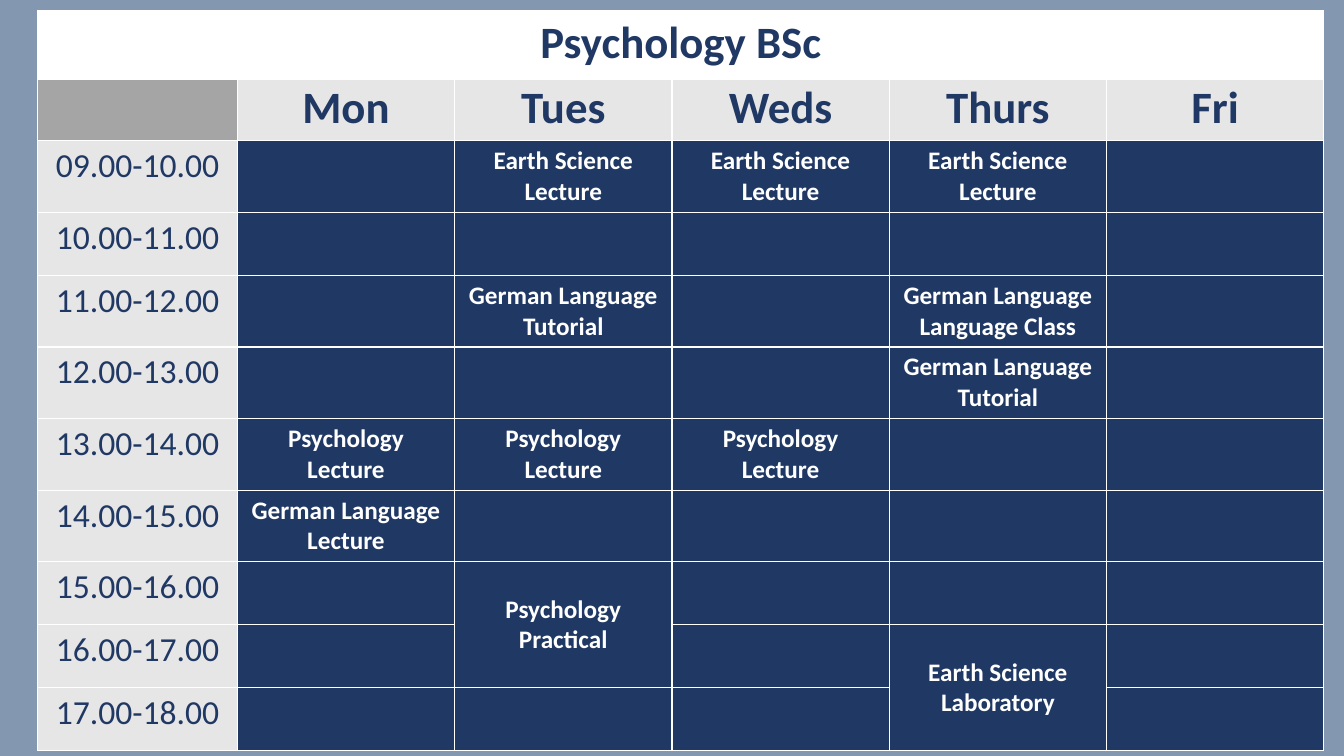
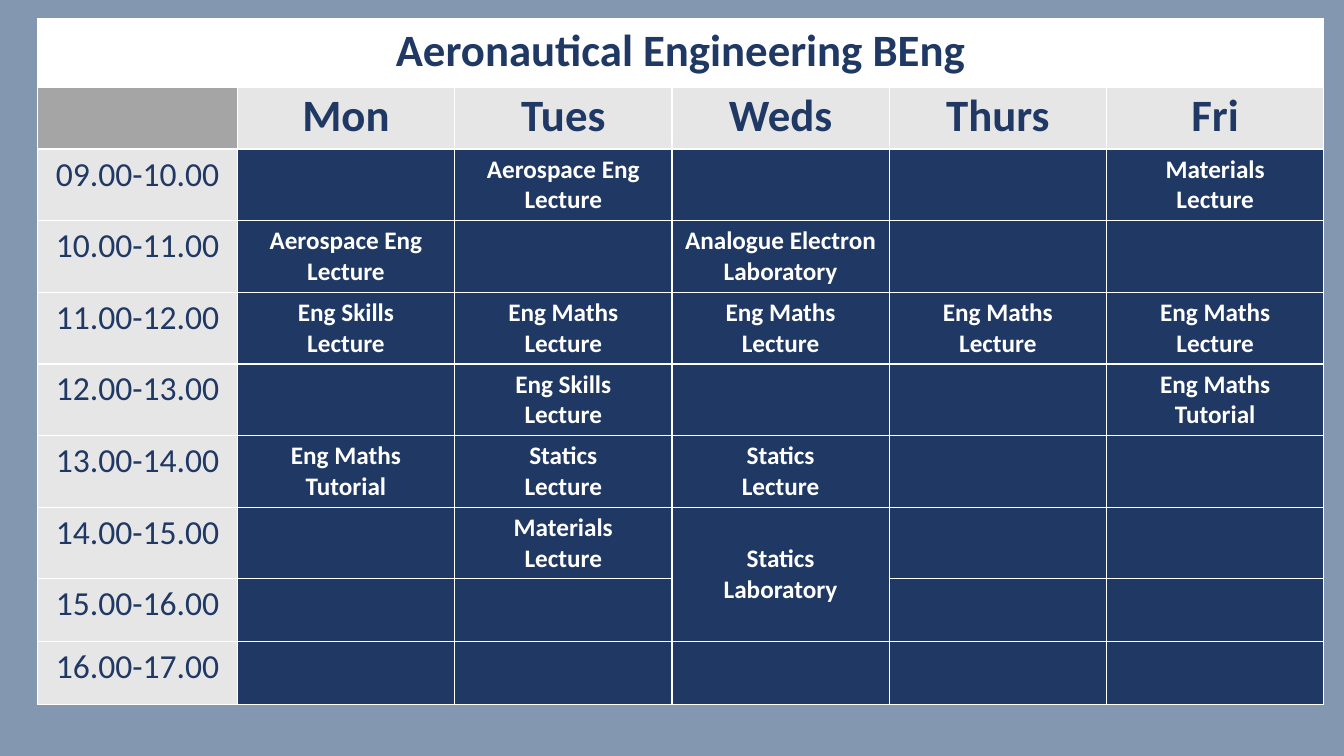
import pptx
import pptx.dml.color
import pptx.enum.text
import pptx.oxml
import pptx.oxml.ns
import pptx.util

EMU_PER_PX = 9525
SLIDE_SIZE = (1280, 720)
TABLE_LEFT = 36
HOUR_WIDTH, DAY_WIDTH = 190, 207
TITLE_HEIGHT, ROW_HEIGHT = 64, 60
HEADER_MARGIN = 3
FONT = "Calibri"
WHITE = pptx.dml.color.RGBColor(0xFF, 0xFF, 0xFF)
NAVY = pptx.dml.color.RGBColor(0x20, 0x38, 0x64)
SLATE = pptx.dml.color.RGBColor(0x84, 0x97, 0xB0)
PALE_GREY = pptx.dml.color.RGBColor(0xE7, 0xE6, 0xE6)
MID_GREY = pptx.dml.color.RGBColor(0xA5, 0xA5, 0xA5)

DAYS = ["Mon", "Tues", "Weds", "Thurs", "Fri"]
FIRST_HOUR = 9

PSYCHOLOGY = [
    ("Tues", 9, 1, "Earth Science", "Lecture"),
    ("Weds", 9, 1, "Earth Science", "Lecture"),
    ("Thurs", 9, 1, "Earth Science", "Lecture"),
    ("Tues", 11, 1, "German Language", "Tutorial"),
    ("Thurs", 11, 1, "German Language", "Language Class"),
    ("Thurs", 12, 1, "German Language", "Tutorial"),
    ("Mon", 13, 1, "Psychology", "Lecture"),
    ("Tues", 13, 1, "Psychology", "Lecture"),
    ("Weds", 13, 1, "Psychology", "Lecture"),
    ("Mon", 14, 1, "German Language", "Lecture"),
    ("Tues", 15, 2, "Psychology", "Practical"),
    ("Thurs", 16, 2, "Earth Science", "Laboratory"),
]

AERONAUTICAL = [
    ("Tues", 9, 1, "Aerospace Eng", "Lecture"),
    ("Fri", 9, 1, "Materials", "Lecture"),
    ("Mon", 10, 1, "Aerospace Eng", "Lecture"),
    ("Weds", 10, 1, "Analogue Electron", "Laboratory"),
    ("Mon", 11, 1, "Eng Skills", "Lecture"),
    ("Tues", 11, 1, "Eng Maths", "Lecture"),
    ("Weds", 11, 1, "Eng Maths", "Lecture"),
    ("Thurs", 11, 1, "Eng Maths", "Lecture"),
    ("Fri", 11, 1, "Eng Maths", "Lecture"),
    ("Tues", 12, 1, "Eng Skills", "Lecture"),
    ("Fri", 12, 1, "Eng Maths", "Tutorial"),
    ("Mon", 13, 1, "Eng Maths", "Tutorial"),
    ("Tues", 13, 1, "Statics", "Lecture"),
    ("Weds", 13, 1, "Statics", "Lecture"),
    ("Tues", 14, 1, "Materials", "Lecture"),
    ("Weds", 14, 2, "Statics", "Laboratory"),
]


def px(length):
    return pptx.util.Emu(length * EMU_PER_PX)


def paint_cell(cell, background, bottom_width=1):
    properties = cell._tc.get_or_add_tcPr()
    for edge, width in (("lnL", 1), ("lnR", 1), ("lnT", 1), ("lnB", bottom_width)):
        properties.append(pptx.oxml.parse_xml(
            f'<a:{edge} {pptx.oxml.ns.nsdecls("a")} w="{pptx.util.Pt(width)}">'
            f'<a:solidFill><a:srgbClr val="{WHITE}"/></a:solidFill></a:{edge}>'
        ))
    cell.fill.solid()
    cell.fill.fore_color.rgb = background


def write_cell(cell, lines, size, color=NAVY, bold=True):
    for index, line in enumerate(lines):
        frame = cell.text_frame
        paragraph = frame.add_paragraph() if index else frame.paragraphs[0]
        paragraph.alignment = pptx.enum.text.PP_ALIGN.CENTER
        run = paragraph.add_run()
        run.text = line
        run.font.name = FONT
        run.font.size = pptx.util.Pt(size)
        run.font.bold = bold
        run.font.color.rgb = color


def add_grid(slide, top, hour_count):
    rows, columns = hour_count + 2, len(DAYS) + 1
    grid = slide.shapes.add_table(
        rows, columns, px(TABLE_LEFT), px(top),
        px(HOUR_WIDTH + DAY_WIDTH * len(DAYS)),
        px(TITLE_HEIGHT + ROW_HEIGHT * (rows - 1)),
    ).table
    grid.first_row = False
    grid.horz_banding = False
    for index, column in enumerate(grid.columns):
        column.width = px(DAY_WIDTH if index else HOUR_WIDTH)
    for index, row in enumerate(grid.rows):
        row.height = px(ROW_HEIGHT if index else TITLE_HEIGHT)
    return grid


def fill_headings(grid, course):
    for cell in grid.rows[0].cells:
        paint_cell(cell, WHITE, bottom_width=3)
    grid.cell(0, 0).merge(grid.cell(0, len(DAYS)))
    write_cell(grid.cell(0, 0), [course], 32)
    paint_cell(grid.cell(1, 0), MID_GREY)
    for column, day in enumerate(DAYS, 1):
        heading = grid.cell(1, column)
        heading.margin_top = heading.margin_bottom = px(HEADER_MARGIN)
        paint_cell(heading, PALE_GREY)
        write_cell(heading, [day], 32)


def fill_hours(grid, hour_count):
    for row, hour in enumerate(range(FIRST_HOUR, FIRST_HOUR + hour_count), 2):
        paint_cell(grid.cell(row, 0), PALE_GREY)
        write_cell(grid.cell(row, 0), [f"{hour:02}.00-{hour + 1}.00"], 24, bold=False)
        for column in range(1, len(DAYS) + 1):
            paint_cell(grid.cell(row, column), NAVY)


def fill_sessions(grid, sessions):
    for day, hour, duration, subject, activity in sessions:
        row, column = hour - FIRST_HOUR + 2, DAYS.index(day) + 1
        session = grid.cell(row, column)
        if duration > 1:
            session.merge(grid.cell(row + duration - 1, column))
            session.vertical_anchor = pptx.enum.text.MSO_ANCHOR.MIDDLE
        write_cell(session, [subject, activity], 18, WHITE)


def add_timetable(deck, course, top, hour_count, sessions):
    slide = deck.slides.add_slide(deck.slide_layouts.get_by_name("Blank"))
    grid = add_grid(slide, top, hour_count)
    fill_headings(grid, course)
    fill_hours(grid, hour_count)
    fill_sessions(grid, sessions)


def main():
    deck = pptx.Presentation()
    deck.slide_width, deck.slide_height = map(px, SLIDE_SIZE)
    backdrop = deck.slide_master.background.fill
    backdrop.solid()
    backdrop.fore_color.rgb = SLATE
    add_timetable(deck, "Psychology BSc", 10, 9, PSYCHOLOGY)
    add_timetable(deck, "Aeronautical Engineering BEng", 18, 8, AERONAUTICAL)
    deck.save("out.pptx")


if __name__ == "__main__":
    main()
